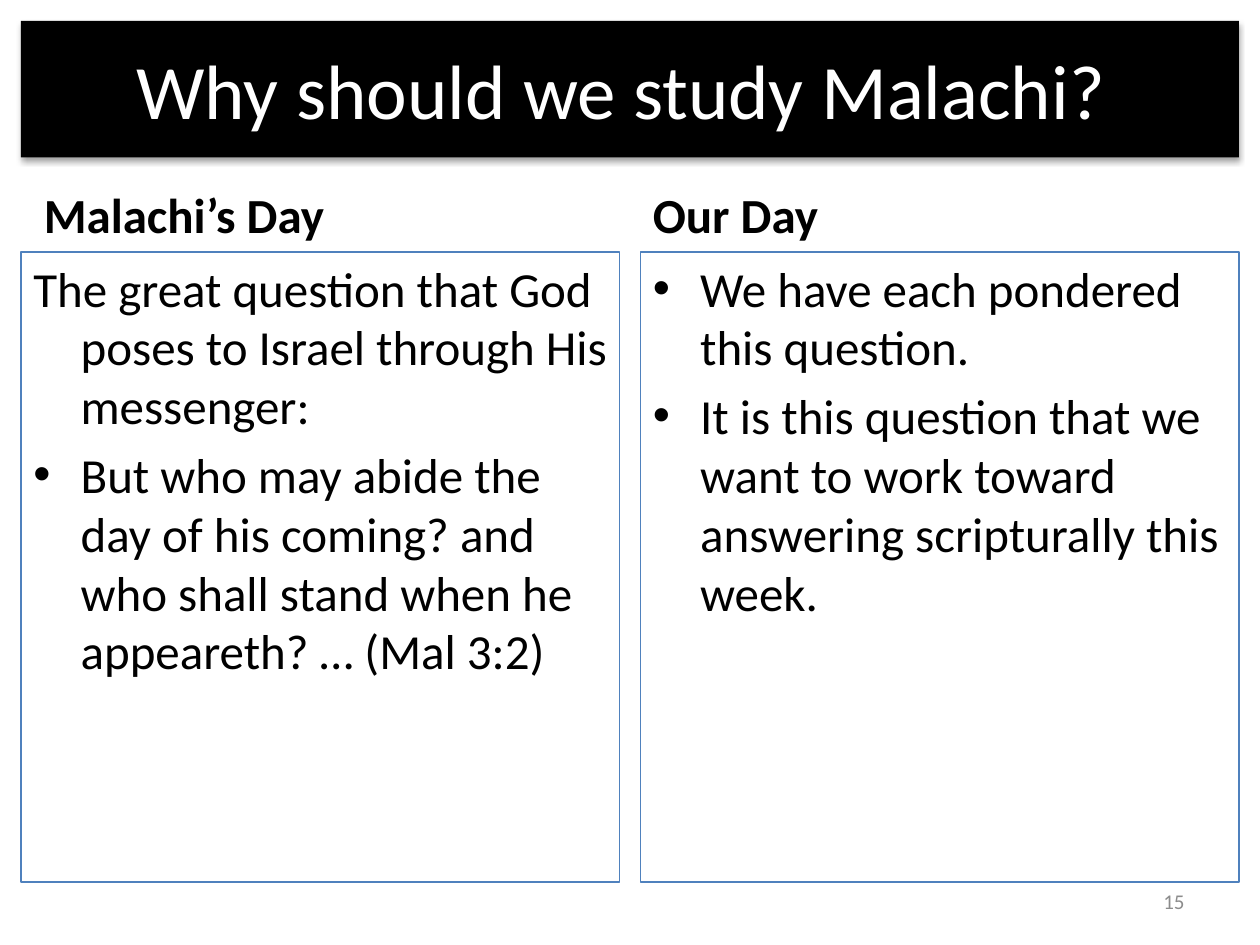
from pptx import Presentation
from pptx.util import Pt
from pptx.dml.color import RGBColor as Rgb
from pptx.enum.shapes import MSO_SHAPE as Kind
from pptx.enum.text import PP_ALIGN as Align, MSO_ANCHOR as Anchor
from pptx.oxml import parse_xml
from pptx.oxml.ns import nsdecls
from lxml.etree import SubElement

HUES = {"black": "000000", "white": "FFFFFF", "blue": "4F81BD", "grey": "8C8C8C"}


def write(shape, lines, size, hue, align=Align.LEFT, anchor=Anchor.TOP, bold=False):
    frame = shape.text_frame
    frame.word_wrap = True
    frame.vertical_anchor = anchor
    frame.text = "\n".join(lines)
    for para in frame.paragraphs:
        para.alignment = align
        font = para.runs[0].font
        font.name = "Calibri"
        font.size = Pt(size)
        font.bold = bold
        font.color.rgb = Rgb.from_string(HUES[hue])


deck = Presentation()
deck.slide_width, deck.slide_height = Pt(720), Pt(540)
slide = deck.slides.add_slide(deck.slide_layouts[6])
shapes = slide.shapes

title = shapes.add_shape(Kind.RECTANGLE, Pt(12), Pt(12), Pt(696), Pt(78))
title.fill.solid()
title.fill.fore_color.rgb = Rgb.from_string(HUES["black"])
title.line.fill.background()
title._element.spPr.append(parse_xml(
    f'<a:effectLst {nsdecls("a")}>'
    '<a:outerShdw blurRad="40000" dist="23000" dir="5400000" rotWithShape="0">'
    f'<a:srgbClr val="{HUES["black"]}"><a:alpha val="35000"/></a:srgbClr>'
    '</a:outerShdw></a:effectLst>'))
write(title, ["Why should we study Malachi? "], 44, "white", Align.CENTER, Anchor.MIDDLE)

number = shapes.add_textbox(Pt(516), Pt(500.5), Pt(168), Pt(28.75))
write(number, ["15"], 12, "grey", Align.RIGHT, Anchor.MIDDLE)

columns = [
    (12, 18, "Malachi’s Day", [
        (False, "The great question that God poses to Israel through His messenger:"),
        (True, "But who may abide the day of his coming? and who shall stand "
               "when he appeareth? … (Mal 3:2)")]),
    (366, 366, "Our Day", [
        (True, "We have each pondered this question."),
        (True, "It is this question that we want to work toward answering "
               "scripturally this week.")]),
]

for left, start, name, points in columns:
    box = shapes.add_shape(Kind.RECTANGLE, Pt(left), Pt(144), Pt(342), Pt(360))
    box.shadow.inherit = False
    box.fill.background()
    box.line.color.rgb = Rgb.from_string(HUES["blue"])
    box.line.width = Pt(0.75)
    write(box, [text for _, text in points], 28, "black")
    for para, (dot, _) in zip(box.text_frame.paragraphs, points):
        para.space_before = Pt(5.6)
        props = para._p.get_or_add_pPr()
        props.set("marL", str(Pt(27)))
        props.set("indent", str(-Pt(27)))
        if dot:
            face = SubElement(props, props.tag.replace("pPr", "buFont"))
            face.set("typeface", "Arial")
            mark = SubElement(props, props.tag.replace("pPr", "buChar"))
            mark.set("char", "•")
        else:
            SubElement(props, props.tag.replace("pPr", "buNone"))

for left, start, name, points in columns:
    head = shapes.add_textbox(Pt(start), Pt(102), Pt(330), Pt(41.2))
    write(head, [name], 28, "black", bold=True)

deck.save("out.pptx")
